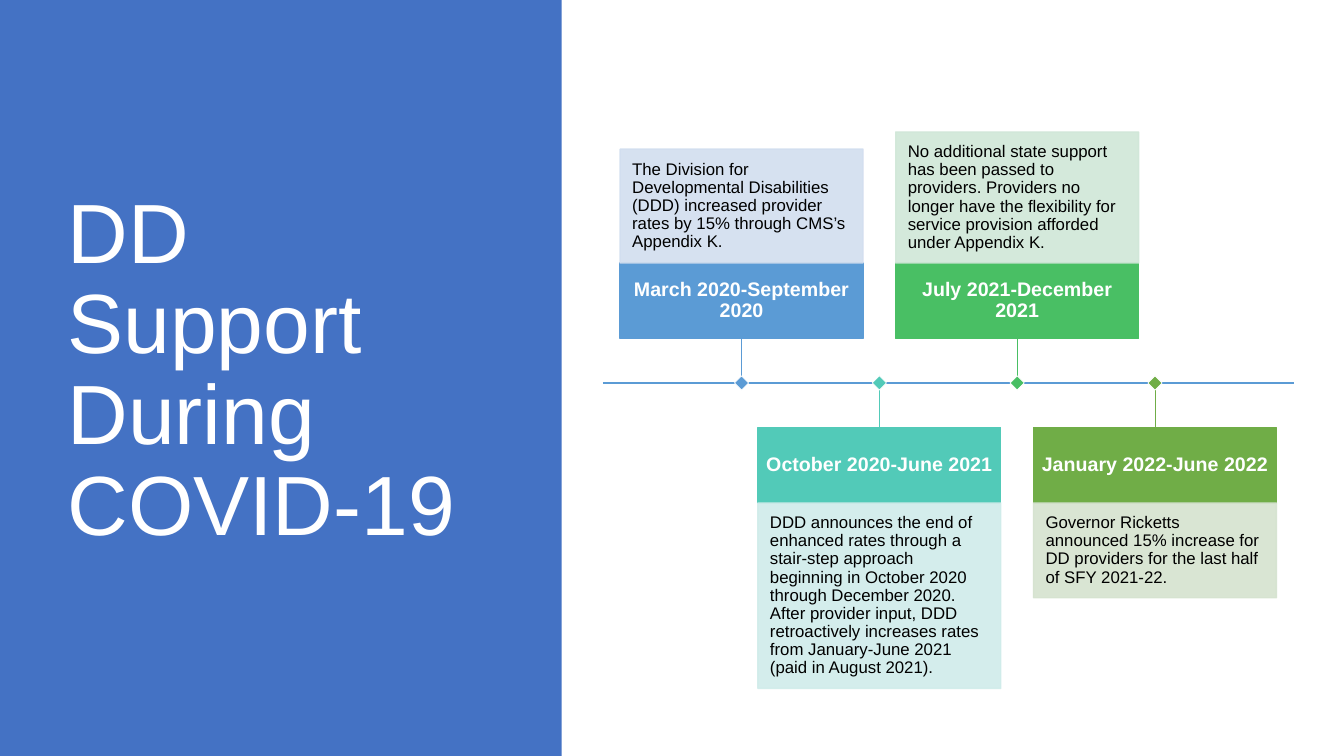
"""Builds a slide with a title panel and an alternating timeline of DD support."""
from dataclasses import dataclass

from lxml import etree
from pptx import Presentation
from pptx.dml.color import RGBColor
from pptx.enum.shapes import MSO_CONNECTOR, MSO_SHAPE
from pptx.enum.text import MSO_ANCHOR, MSO_AUTO_SIZE, PP_ALIGN
from pptx.oxml.ns import qn
from pptx.util import Inches, Pt

RECTANGLE = MSO_SHAPE.RECTANGLE
STRAIGHT = MSO_CONNECTOR.STRAIGHT
MIDDLE = MSO_ANCHOR.MIDDLE
NO_AUTOFIT = MSO_AUTO_SIZE.NONE
LEFT, CENTER = PP_ALIGN.LEFT, PP_ALIGN.CENTER
TOP_SIDE, BOTTOM_SIDE = 0, 2


@dataclass(frozen=True)
class Theme:
    font: str = "Arial"
    panel: str = "4472C4"
    axis: str = "5B9BD5"
    white: str = "FFFFFF"
    black: str = "000000"
    title_size: int = 60
    label_size: int = 14
    detail_size: int = 12


theme = Theme()


def write_text(shape, text, size, color, bold=False, align=LEFT, inset=0.1):
    frame = shape.text_frame
    frame.word_wrap = True
    frame.auto_size = NO_AUTOFIT
    frame.vertical_anchor = MIDDLE
    frame.margin_left = frame.margin_right = Inches(inset)
    frame.margin_top = frame.margin_bottom = Inches(inset)
    para = frame.paragraphs[0]
    para.alignment = align
    para.line_spacing = 0.9
    span = para.add_run()
    span.text = text
    span.font.name = theme.font
    span.font.size = Pt(size)
    span.font.bold = bold
    span.font.color.rgb = RGBColor.from_string(color)


def paint(shape, fill, line, width=1, opacity=100):
    shape.shadow.inherit = False
    shape.fill.solid()
    shape.fill.fore_color.rgb = RGBColor.from_string(fill)
    shape.line.color.rgb = RGBColor.from_string(line)
    shape.line.width = Pt(width)
    if opacity < 100:
        for color in shape.element.spPr.iter(qn("a:srgbClr")):
            etree.SubElement(color, qn("a:alpha"), val=str(opacity * 1000))


deck = Presentation()
deck.slide_width, deck.slide_height = Inches(13.33), Inches(7.5)
page = deck.slides.add_slide(deck.slide_layouts[5])
shapes = page.shapes

title = shapes.title
title.left, title.top = Inches(0.57), Inches(0.68)
title.width, title.height = Inches(4.16), Inches(6.02)
write_text(title, "DD Support During COVID-19", theme.title_size, theme.white)

panel = shapes.add_shape(RECTANGLE, 0, 0, Inches(5.57), deck.slide_height)
paint(panel, theme.panel, theme.panel)
panel.line.fill.background()
title.element.addprevious(panel.element)

axis_y = 3.8
box_width, label_height = 2.41, 0.75
first_left, last_left = 6.15, 10.25
label_gap = 0.44
marker_size = 0.1

periods = [
    ("March 2020-September 2020", "5B9BD5", "D2DEEF", 1.13,
     "The Division for Developmental Disabilities (DDD) increased provider "
     "rates by 15% through CMS’s Appendix K."),
    ("October 2020-June 2021", "52CAB8", "D0ECEA", 1.84,
     "DDD announces the end of enhanced rates through a stair-step approach "
     "beginning in October 2020 through December 2020. After provider input, "
     "DDD retroactively increases rates from January-June 2021 "
     "(paid in August 2021)."),
    ("July 2021-December 2021", "49BF64", "D0E7D8", 1.3,
     "No additional state support has been passed to providers. Providers no "
     "longer have the flexibility for service provision afforded under "
     "Appendix K."),
    ("January 2022-June 2022", "70AD47", "D5E3CF", 0.94,
     "Governor Ricketts announced 15% increase for DD providers for the last "
     "half of SFY 2021-22."),
]
step = (last_left - first_left) / (len(periods) - 1)

axis = shapes.add_connector(
    STRAIGHT, Inches(5.98), Inches(axis_y), Inches(12.83), Inches(axis_y))
lines = [(axis, theme.axis, 1)]

for index, (dates, color, tint, detail_height, detail_text) in enumerate(periods):
    left = first_left + index * step
    center = left + box_width / 2
    above = index % 2 == 0
    if above:
        label_top = axis_y - label_gap - label_height
        detail_top = label_top - detail_height
    else:
        label_top = axis_y + label_gap
        detail_top = label_top + label_height

    label = shapes.add_shape(RECTANGLE, Inches(left), Inches(label_top),
                             Inches(box_width), Inches(label_height))
    paint(label, color, color)
    write_text(label, dates, theme.label_size, theme.white, bold=True,
               align=CENTER, inset=0.08)

    detail = shapes.add_shape(RECTANGLE, Inches(left), Inches(detail_top),
                              Inches(box_width), Inches(detail_height))
    paint(detail, tint, tint, opacity=90)
    write_text(detail, detail_text, theme.detail_size, theme.black, inset=0.12)

    stem = shapes.add_connector(STRAIGHT, Inches(center), Inches(label_top),
                                Inches(center), Inches(axis_y))
    stem.begin_connect(label, BOTTOM_SIDE if above else TOP_SIDE)
    lines.append((stem, color, 0.5))

    marker = shapes.add_shape(
        RECTANGLE, Inches(center - marker_size / 2),
        Inches(axis_y - marker_size / 2), Inches(marker_size), Inches(marker_size))
    marker.rotation = 45
    paint(marker, color, theme.white, width=0.5)

for connector, color, width in lines:
    connector.line.color.rgb = RGBColor.from_string(color)
    connector.line.width = Pt(width)
    etree.SubElement(connector.element.spPr, qn("a:effectLst"))

deck.save("out.pptx")
